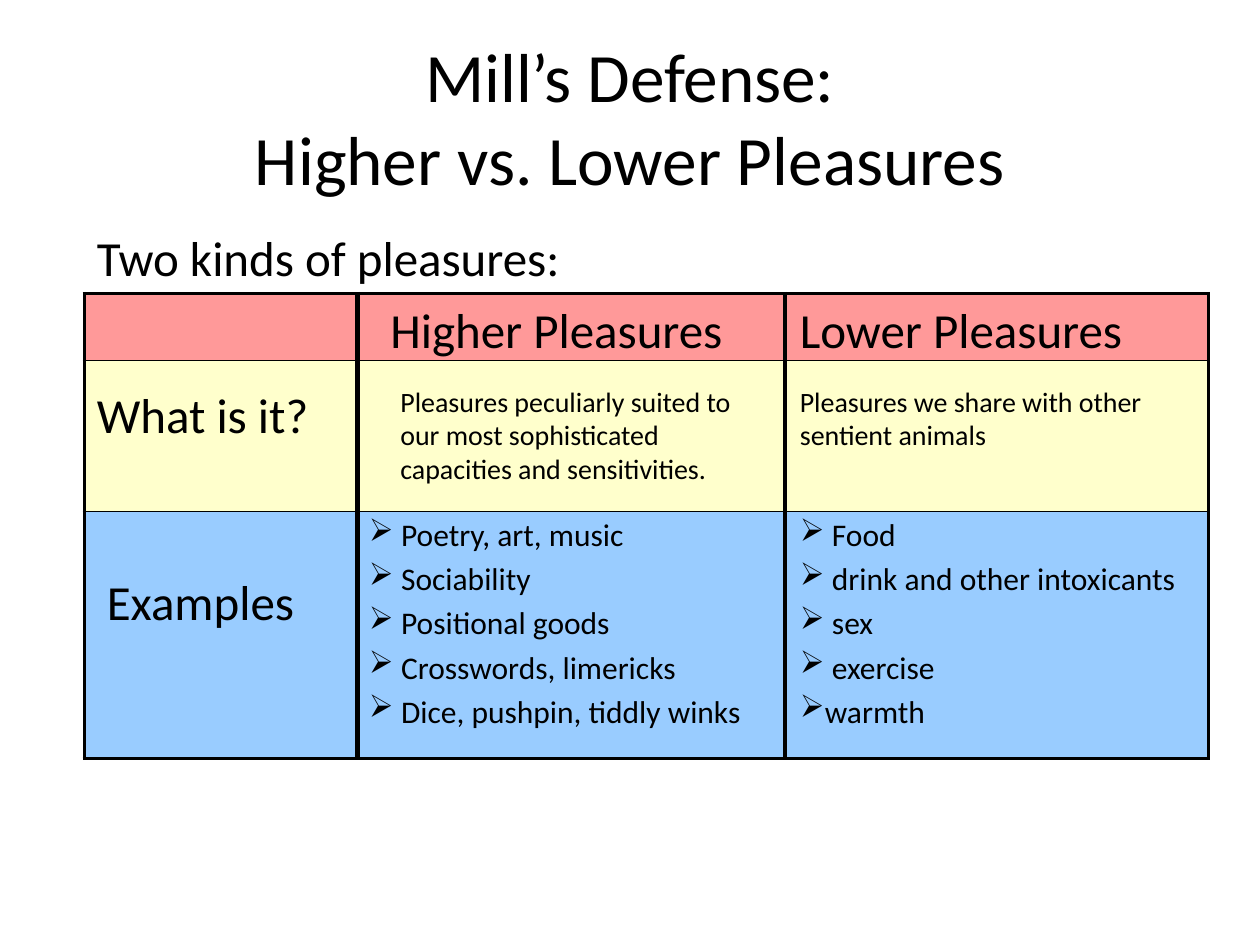
from lxml.etree import SubElement
from pptx import Presentation
from pptx.dml.color import RGBColor
from pptx.enum.text import MSO_ANCHOR, PP_ALIGN
from pptx.oxml.ns import qn
from pptx.util import Inches, Pt

BLACK = RGBColor(0x00, 0x00, 0x00)
PINK = RGBColor(0xFF, 0x99, 0x99)
CREAM = RGBColor(0xFF, 0xFF, 0xCC)
BLUE = RGBColor(0x99, 0xCC, 0xFF)
FONT = "Calibri"
COL_WIDTHS = (2.17, 3.39, 3.36)
ROWS = ((0.53, PINK), (1.2, CREAM), (1.96, BLUE))
COL_RULES = (2.25, 3, 3, 2.25)
ROW_RULES = (2.25, 1, 1, 2.25)

LABELS = (
    ((3, 2.33, 3.25, 0.57), 28, "Higher Pleasures"),
    ((6.25, 2.33, 3.33, 0.57), 28, "Lower Pleasures"),
    ((0.67, 3, 2.42, 0.57), 28, "What is it?"),
    ((0.75, 4.49, 2, 0.57), 28, "Examples"),
    ((3.08, 3, 3, 0.91), 16,
     "Pleasures peculiarly suited to our most sophisticated capacities and sensitivities."),
    ((6.25, 3, 3.33, 0.64), 16, "Pleasures we share with other sentient animals"),
)
HIGHER = (" Poetry, art, music", " Sociability", " Positional goods",
          " Crosswords, limericks", " Dice, pushpin, tiddly winks")
LOWER = (" Food", " drink and other intoxicants", " sex", " exercise", "warmth")


def style_font(font, size):
    """Apply the common face and colour at the given size."""
    for name, value in {"name": FONT, "size": Pt(size), "bold": False}.items():
        setattr(font, name, value)
    font.color.rgb = BLACK


def add_title(slide, box, text):
    """Fill and place the title placeholder."""
    sp = slide.shapes.title
    for name, value in zip(("left", "top", "width", "height"), box):
        setattr(sp, name, Inches(value))
    tf = sp.text_frame
    tf.text = text
    tf.vertical_anchor = MSO_ANCHOR.MIDDLE
    p = tf.paragraphs[0]
    p.alignment = PP_ALIGN.CENTER
    for r in p.runs:
        style_font(r.font, 39.6)


def add_bullet(p):
    """Give a paragraph an arrow bullet without indent."""
    pPr = p._p.get_or_add_pPr()
    pPr.set("marL", "0")
    pPr.set("indent", "0")
    SubElement(pPr, qn("a:buChar"), char="➢")


def add_text(slide, box, size, lines, bullets=False, space=0.2, wrap=True):
    """Add a text box with one paragraph per line."""
    tf = slide.shapes.add_textbox(*map(Inches, box)).text_frame
    tf.word_wrap = wrap
    for i, line in enumerate(lines):
        p = tf.add_paragraph() if i else tf.paragraphs[0]
        p.space_before = Pt(size * space)
        r = p.add_run()
        r.text = line
        style_font(r.font, size)
        if bullets:
            add_bullet(p)


def set_borders(cell, widths):
    """Draw the left, right, top and bottom rules of a cell."""
    tcPr = cell._tc.get_or_add_tcPr()
    for i, (side, width) in enumerate(zip("LRTB", widths)):
        ln = SubElement(tcPr, qn(f"a:ln{side}"), w=str(Pt(width)))
        fill = SubElement(ln, qn("a:solidFill"))
        SubElement(fill, qn("a:srgbClr"), val=str(BLACK))
        tcPr.insert(i, ln)


def add_grid(slide, left, top):
    """Add the coloured comparison table."""
    size = (sum(COL_WIDTHS), sum(height for height, _ in ROWS))
    frame = slide.shapes.add_table(len(ROWS), len(COL_WIDTHS),
                                   *map(Inches, (left, top, *size)))
    table = frame.table
    table.first_row = table.horz_banding = False
    for col, width in zip(table.columns, COL_WIDTHS):
        col.width = Inches(width)
    for i, (height, color) in enumerate(ROWS):
        table.rows[i].height = Inches(height)
        for j, cell in enumerate(table.rows[i].cells):
            cell.fill.solid()
            cell.fill.fore_color.rgb = color
            set_borders(cell, COL_RULES[j:j + 2] + ROW_RULES[i:i + 2])


def main():
    """Build and save the slide."""
    prs = Presentation()
    prs.slide_width, prs.slide_height = Inches(10), Inches(7.5)
    slide = prs.slides.add_slide(prs.slide_layouts[5])
    add_title(slide, (0.5, 0.3, 9, 1.25), "Mill’s Defense:\vHigher vs. Lower Pleasures")
    add_grid(slide, 0.67, 2.33)
    for box, size, text in LABELS:
        add_text(slide, box, size, [text])
    add_text(slide, (6.25, 4.04, 3.33, 1.86), 18, LOWER, bullets=True)
    add_text(slide, (2.83, 4.04, 3.25, 1.86), 18, HIGHER, bullets=True)
    add_text(slide, (0.67, 1.76, 3.91, 0.57), 28, ["Two kinds of pleasures:"],
             space=0, wrap=False)
    prs.save("out.pptx")


if __name__ == "__main__":
    main()
